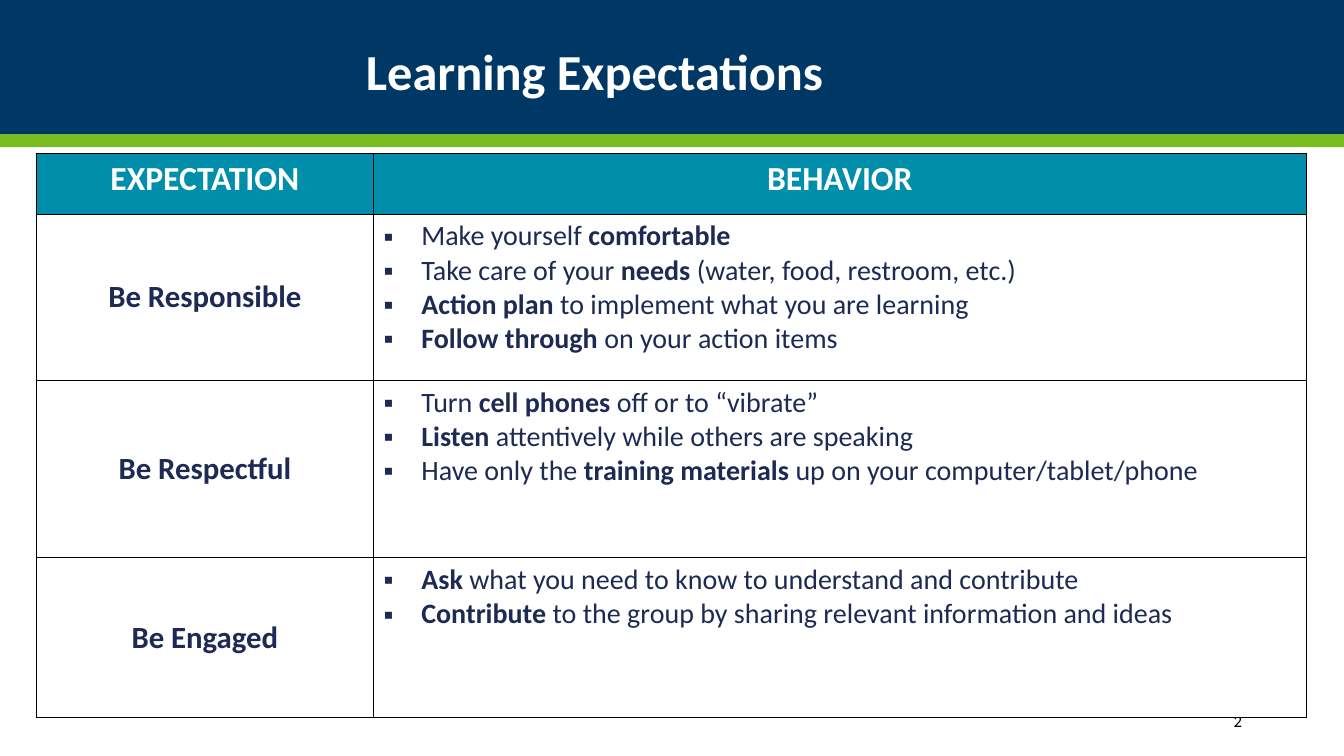
import dataclasses

import pptx
import pptx.dml.color
import pptx.enum.shapes
import pptx.enum.text
import pptx.oxml
import pptx.oxml.ns
import pptx.util

# Grid: square cells, ten to the inch
CELL = pptx.util.Inches(0.1)
SLIDE_COLUMNS, SLIDE_ROWS = 133.33, 75
HANGING_INDENT = 3.75
FONT = "Calibri"
COLORS = {
    "navy": "003865",
    "green": "78BE21",
    "teal": "008EAA",
    "ink": "1D2A53",
    "white": "FFFFFF",
    "black": "000000",
}
ALIGN = pptx.enum.text.PP_ALIGN
MIDDLE = pptx.enum.text.MSO_ANCHOR.MIDDLE


@dataclasses.dataclass(frozen=True)
class Box:
    column: float
    row: float
    columns: float
    rows: float

    def lengths(self) -> tuple[int, ...]:
        return tuple(grid(value) for value in dataclasses.astuple(self))


@dataclasses.dataclass(frozen=True)
class Band:
    box: Box
    color: str


@dataclasses.dataclass(frozen=True)
class Expectation:
    name: str
    rows: float
    behaviors: tuple[str, ...]  # words between asterisks are bold
    fill: str | None = None


BANDS = (
    Band(Box(0, 0, SLIDE_COLUMNS, 13.3), "navy"),
    Band(Box(0, 13.3, SLIDE_COLUMNS, 1.3), "green"),
)
TITLE_BOX = Box(35.3, 2.4, 83.6, 10)
NUMBER_BOX = Box(108.2, 69.5, 16, 4)
TABLE_BOX = Box(3.6, 15.2, 126, 55.9)
TABLE_COLUMNS = (33.45, 92.55)
HEADINGS = ("EXPECTATION", "BEHAVIOR")
HEADING_ROWS = 6.05
EXPECTATIONS = (
    Expectation("Be Responsible", 16.5, (
        "Make yourself *comfortable*",
        "Take care of your *needs* (water, food, restroom, etc.)",
        "*Action plan *to implement what you are learning",
        "*Follow through *on your action items",
    )),
    Expectation("Be Respectful", 17.6, (
        "Turn *cell phones* off or to “vibrate”",
        "*Listen *attentively while others are speaking",
        "Have only the *training materials *up on your computer/tablet/phone",
    )),
    Expectation("Be Engaged", 15.8, (
        "*Ask* what you need to know to understand and contribute",
        "*Contribute *to the group by sharing relevant information and ideas",
    ), "white"),
)


def grid(cells: float) -> int:
    return round(cells * CELL)


def rgb(color: str) -> pptx.dml.color.RGBColor:
    return pptx.dml.color.RGBColor.from_string(COLORS[color])


def format_font(paragraph, size: float, color: str, bold: bool | None = None) -> None:
    font = paragraph.font
    font.name, font.size, font.bold = FONT, pptx.util.Pt(size), bold
    font.color.rgb = rgb(color)


def draw_band(slide, band: Band) -> None:
    shape = slide.shapes.add_shape(
        pptx.enum.shapes.MSO_SHAPE.RECTANGLE, *band.box.lengths())
    shape.shadow.inherit = False
    shape.fill.solid()
    shape.fill.fore_color.rgb = rgb(band.color)
    shape.line.fill.background()


def draw_title(slide, text: str) -> None:
    title = slide.shapes.title
    slide.shapes.element.append(title.element)  # in front of the bands
    title.left, title.top, title.width, title.height = TITLE_BOX.lengths()
    title.text_frame.text = text
    title.text_frame.auto_size = pptx.enum.text.MSO_AUTO_SIZE.NONE
    title.text_frame.vertical_anchor = MIDDLE
    paragraph = title.text_frame.paragraphs[0]
    paragraph.alignment = ALIGN.LEFT
    paragraph.line_spacing = 0.9
    format_font(paragraph, 36, "white", True)


def draw_number(slide, text: str) -> None:
    text_frame = slide.shapes.add_textbox(*NUMBER_BOX.lengths()).text_frame
    text_frame.word_wrap = True
    text_frame.vertical_anchor = MIDDLE
    paragraph = text_frame.paragraphs[0]
    paragraph.text = text
    paragraph.alignment = ALIGN.RIGHT
    format_font(paragraph, 12, "black")


def format_cell(cell, fill: str | None) -> None:
    properties = cell._tc.get_or_add_tcPr()
    for side in ("lnL", "lnR", "lnT", "lnB"):
        properties.append(pptx.oxml.parse_xml(
            f'<a:{side} {pptx.oxml.ns.nsdecls("a")} w="{pptx.util.Pt(1)}">'
            f'<a:solidFill><a:srgbClr val="{COLORS["black"]}"/></a:solidFill>'
            f'</a:{side}>'))
    if fill:
        cell.fill.solid()
        cell.fill.fore_color.rgb = rgb(fill)
    else:
        cell.fill.background()


def hang(paragraph):
    properties = paragraph._p.get_or_add_pPr()
    properties.set("marL", str(grid(HANGING_INDENT)))
    properties.set("indent", str(-grid(HANGING_INDENT)))
    return properties


def write_label(cell, text: str, size: float, color: str) -> None:
    paragraph = cell.text_frame.paragraphs[0]
    paragraph.text = text
    paragraph.alignment = ALIGN.CENTER
    hang(paragraph)
    format_font(paragraph, size, color, True)


def write_behaviors(cell, behaviors: tuple[str, ...]) -> None:
    text_frame = cell.text_frame
    for index, behavior in enumerate(behaviors):
        paragraph = text_frame.add_paragraph() if index else text_frame.paragraphs[0]
        properties = hang(paragraph)
        for bullet in (f'buClr {{}}><a:srgbClr val="{COLORS["ink"]}"/></a:buClr>',
                       'buFont {} typeface="Arial"/>', 'buChar {} char="▪"/>'):
            properties.append(pptx.oxml.parse_xml(
                "<a:" + bullet.format(pptx.oxml.ns.nsdecls("a"))))
        format_font(paragraph, 20, "ink")
        for part, words in enumerate(behavior.split("*")):
            if words:
                run = paragraph.add_run()
                run.text = words
                run.font.bold = part % 2 == 1


def draw_table(slide) -> None:
    table = slide.shapes.add_table(
        len(EXPECTATIONS) + 1, len(HEADINGS), *TABLE_BOX.lengths()).table
    table.first_row = table.horz_banding = False
    for column, width in zip(table.columns, TABLE_COLUMNS):
        column.width = grid(width)

    # Heading row
    table.rows[0].height = grid(HEADING_ROWS)
    for cell, heading in zip(table.rows[0].cells, HEADINGS):
        format_cell(cell, "teal")
        write_label(cell, heading, 24, "white")

    # One row for each expectation
    for index, expectation in enumerate(EXPECTATIONS, start=1):
        table.rows[index].height = grid(expectation.rows)
        name_cell, behavior_cell = table.rows[index].cells
        for cell in (name_cell, behavior_cell):
            format_cell(cell, expectation.fill)
        name_cell.vertical_anchor = MIDDLE
        write_label(name_cell, expectation.name, 22, "ink")
        write_behaviors(behavior_cell, expectation.behaviors)


def main() -> None:
    presentation = pptx.Presentation()
    presentation.slide_width = grid(SLIDE_COLUMNS)
    presentation.slide_height = grid(SLIDE_ROWS)
    slide = presentation.slides.add_slide(
        presentation.slide_layouts.get_by_name("Title Only"))
    for band in BANDS:
        draw_band(slide, band)
    draw_title(slide, "Learning Expectations")
    draw_number(slide, "2")
    draw_table(slide)
    presentation.save("out.pptx")


if __name__ == "__main__":
    main()
